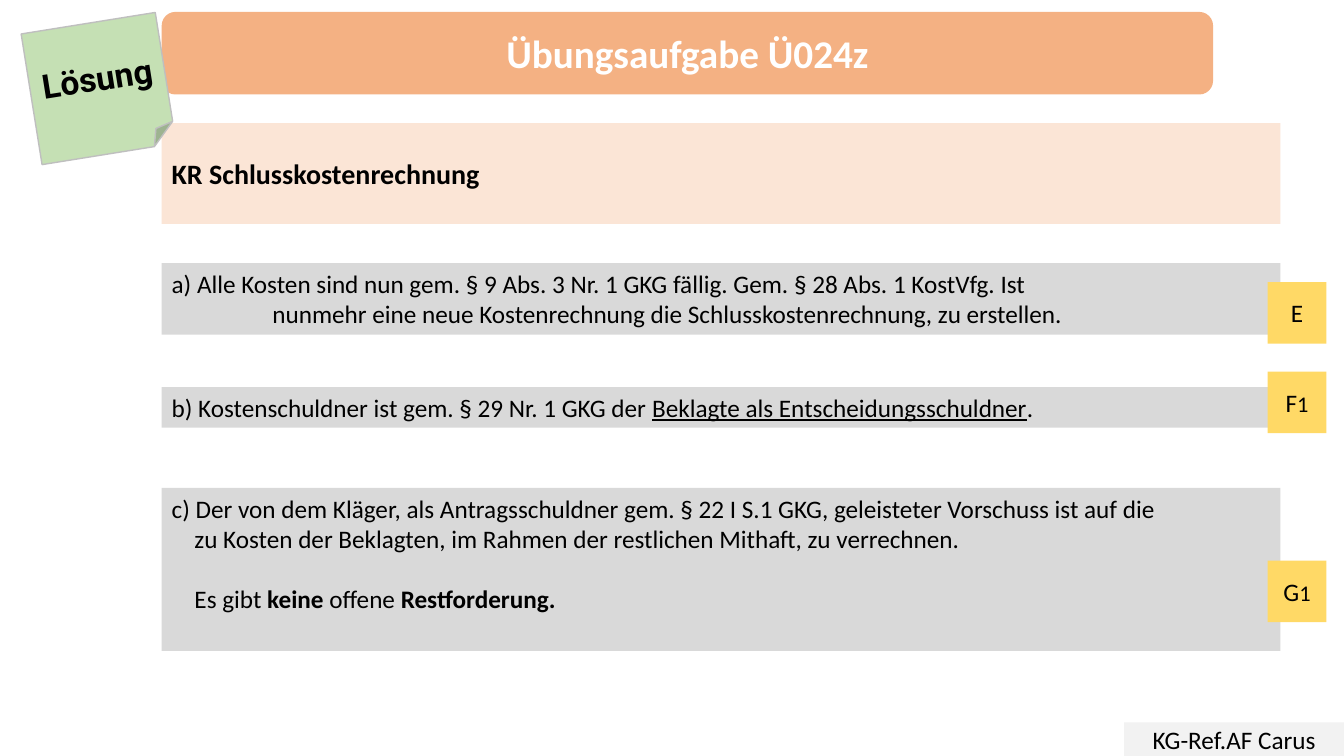
"""Build the solution slide for exercise Ü024z on the final cost statement."""
import pptx
import pptx.dml.color
import pptx.enum.shapes
import pptx.enum.text
import pptx.util

Pt = pptx.util.Pt
SHAPE = pptx.enum.shapes.MSO_SHAPE
ANCHOR = pptx.enum.text.MSO_ANCHOR
ALIGN = pptx.enum.text.PP_ALIGN

THEME = {
    "font": "Calibri", "note_font": "Roboto",
    "text": "000000", "title_text": "FFFFFF",
    "title": "F4B183", "topic": "FBE5D6", "answer": "D9D9D9",
    "tab": "FFD966", "note": "C5E0B4", "note_line": "BFBFBF", "footer": "F2F2F2",
    "title_size": 28, "note_size": 24, "topic_size": 20, "body_size": 18, "index_size": 16,
}
BOLD = {"bold": True}
INDEX = {"size": Pt(THEME["index_size"])}

TITLE = "Übungsaufgabe Ü024z"
TOPIC = "KR Schlusskostenrechnung"
NOTE = "Lösung"
FOOTER = "KG-Ref.AF Carus"

# Each paragraph: left indent, space before, runs of (text, format).
ANSWERS = [
    {"top": 188, "height": 51, "paragraphs": [
        (0, 0, [("a) Alle Kosten sind nun gem. § 9 Abs. 3 Nr. 1 GKG fällig. "
                 "Gem. § 28 Abs. 1 KostVfg. Ist", {})]),
        (72, 0, [("nunmehr eine neue Kostenrechnung die Schlusskostenrechnung, "
                  "zu erstellen.", {})])]},
    {"top": 276.5, "height": 29, "paragraphs": [
        (0, 0, [("b) Kostenschuldner ist gem. § 29 Nr. 1 GKG der ", {}),
                ("Beklagte als Entscheidungsschuldner", {"underline": True}),
                (".", {})])]},
    {"top": 348.5, "height": 116.5, "paragraphs": [
        (0, 0, [("c) Der von dem Kläger, als Antragsschuldner gem. § 22 I S.1 GKG, "
                 "geleisteter Vorschuss ist auf die", {})]),
        (16.3, 0, [("zu Kosten der Beklagten, im Rahmen der restlichen Mithaft, "
                    "zu verrechnen.", {})]),
        (16.3, 21.5, [("Es gibt ", {}), ("keine", BOLD), (" offene ", {}),
                      ("Restforderung.", BOLD)])]},
]
TABS = [
    (201.5, [("E", {})]),
    (265.5, [("F", {}), ("1", INDEX)]),
    (400.5, [("G", {}), ("1", INDEX)]),
]

SLIDE_W, SLIDE_H = 960, 540
LEFT, BODY_W = 115.5, 799
TAB_LEFT, TAB_W, TAB_H = 905.5, 42, 44
FOOTER_W, FOOTER_H = 157, 24


def rgb(name):
    return pptx.dml.color.RGBColor.from_string(THEME[name])


def add_box(slide, box, fill, paragraphs, kind=SHAPE.RECTANGLE, size="body_size",
            font="font", color="text", bold=False, align=ALIGN.CENTER, anchor=ANCHOR.MIDDLE):
    """Add one filled shape with its formatted paragraphs."""
    sp = slide.shapes.add_shape(kind, *map(Pt, box))
    sp.shadow.inherit = False
    sp.fill.solid()
    sp.fill.fore_color.rgb = rgb(fill)
    sp.line.fill.background()
    tf = sp.text_frame
    tf.word_wrap = True
    tf.vertical_anchor = anchor
    base = {"name": THEME[font], "size": Pt(THEME[size]), "bold": bold}
    for i, (indent, before, runs) in enumerate(paragraphs):
        p = tf.add_paragraph() if i else tf.paragraphs[0]
        p.alignment = align
        p.space_before = Pt(before)
        if indent:
            p._p.get_or_add_pPr().set("marL", str(Pt(indent)))
        for text, extra in runs:
            r = p.add_run()
            r.text = text
            r.font.color.rgb = rgb(color)
            for key, value in {**base, **extra}.items():
                setattr(r.font, key, value)
    return sp


def plain(text):
    return [(0, 0, [(text, {})])]


def main():
    prs = pptx.Presentation()
    prs.slide_width, prs.slide_height = Pt(SLIDE_W), Pt(SLIDE_H)
    s = prs.slides.add_slide(prs.slide_layouts[6])

    add_box(s, (LEFT, 88, BODY_W, 72), "topic", plain(TOPIC),
            size="topic_size", bold=True, align=ALIGN.LEFT)
    add_box(s, (SLIDE_W - FOOTER_W, SLIDE_H - FOOTER_H, FOOTER_W, FOOTER_H),
            "footer", plain(FOOTER))
    for answer in ANSWERS:
        add_box(s, (LEFT, answer["top"], BODY_W, answer["height"]), "answer",
                answer["paragraphs"], align=ALIGN.LEFT, anchor=ANCHOR.TOP)
    add_box(s, (LEFT, 8.5, 751, 59), "title", plain(TITLE), SHAPE.ROUNDED_RECTANGLE,
            size="title_size", color="title_text", bold=True)

    note = add_box(s, (22, 16, 97, 94.5), "note", plain(NOTE), SHAPE.FOLDED_CORNER,
                   size="note_size", font="note_font", bold=True)
    note.rotation = 350.9
    note.line.color.rgb = rgb("note_line")
    note.line.width = Pt(1)

    for top, runs in TABS:
        add_box(s, (TAB_LEFT, top, TAB_W, TAB_H), "tab", [(0, 0, runs)])
    prs.save("out.pptx")


if __name__ == "__main__":
    main()
